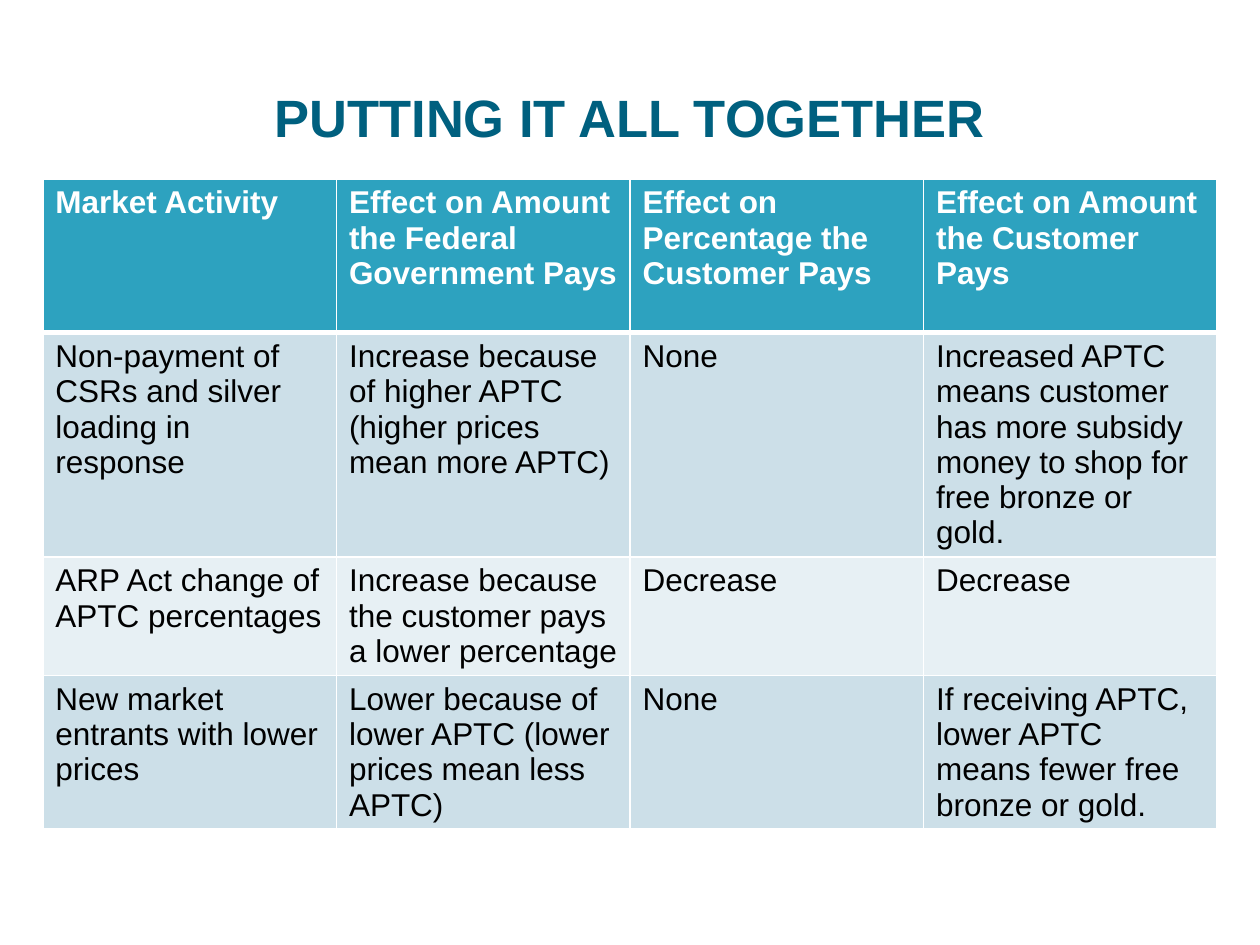
from dataclasses import dataclass

from lxml.etree import SubElement
from pptx import Presentation
from pptx.dml.color import RGBColor as Color
from pptx.enum.text import MSO_ANCHOR as Anchor, PP_ALIGN as Align
from pptx.oxml.ns import qn
from pptx.util import Inches, Pt


@dataclass(frozen=True)
class Theme:
    font: str = "Arial"
    title_size: int = 30
    table_size: int = 18
    title: str = "00607F"
    header_fill: str = "2DA2BF"
    header_text: str = "FFFFFF"
    body_text: str = "000000"
    bands: tuple[str, str] = ("CCDFE8", "E7F0F4")
    border: str = "FFFFFF"
    thin: int = 1
    thick: int = 3


@dataclass(frozen=True)
class Row:
    height: float
    texts: tuple[str, str, str, str]


THEME = Theme()
COLUMN_WIDTH = 2.33
ROWS = (
    Row(1.22, (
        "Market Activity",
        "Effect on Amount the Federal Government Pays",
        "Effect on Percentage the Customer Pays",
        "Effect on Amount the Customer Pays",
    )),
    Row(1.78, (
        "Non-payment of CSRs and silver loading in response",
        "Increase because of higher APTC (higher prices mean more APTC)",
        "None",
        "Increased APTC means customer has more subsidy money to shop for "
        "free bronze or gold.",
    )),
    Row(0.94, (
        "ARP Act change of APTC percentages",
        "Increase because the customer pays a lower percentage",
        "Decrease",
        "Decrease",
    )),
    Row(1.22, (
        "New market entrants with lower prices",
        "Lower because of lower APTC (lower prices mean less APTC)",
        "None",
        "If receiving APTC, lower APTC means fewer free bronze or gold.",
    )),
)


def format_text(text_frame, size: int, color: str, bold: bool) -> None:
    for paragraph in text_frame.paragraphs:
        for run in paragraph.runs:
            run.font.name = THEME.font
            run.font.size = Pt(size)
            run.font.bold = bold
            run.font.color.rgb = Color.from_string(color)


def set_borders(cell, top: int, bottom: int) -> None:
    """Draw the four cell borders; widths are in points."""
    properties = cell._tc.get_or_add_tcPr()
    widths = {"L": THEME.thin, "R": THEME.thin, "T": top, "B": bottom}
    for side, width in widths.items():
        line = SubElement(properties, qn(f"a:ln{side}"), w=str(Pt(width)))
        fill = SubElement(line, qn("a:solidFill"))
        SubElement(fill, qn("a:srgbClr"), val=THEME.border)


def add_title(slide, text: str) -> None:
    title = slide.shapes.title
    title.left, title.top = Inches(0.5), Inches(0.3)
    title.width, title.height = Inches(9), Inches(1.25)
    title.text_frame.text = text
    title.text_frame.vertical_anchor = Anchor.MIDDLE
    title.text_frame.paragraphs[0].alignment = Align.CENTER
    format_text(title.text_frame, THEME.title_size, THEME.title, bold=True)


def fill_cell(cell, text: str, row_index: int) -> None:
    is_header = row_index == 0
    # The rule under the header is shared by the first two rows
    set_borders(
        cell,
        top=THEME.thick if row_index == 1 else THEME.thin,
        bottom=THEME.thick if is_header else THEME.thin,
    )
    fill = THEME.header_fill if is_header else THEME.bands[(row_index - 1) % 2]
    cell.fill.solid()
    cell.fill.fore_color.rgb = Color.from_string(fill)
    cell.text_frame.text = text
    color = THEME.header_text if is_header else THEME.body_text
    format_text(cell.text_frame, THEME.table_size, color, bold=is_header)


def add_effects_table(slide, rows: tuple[Row, ...]) -> None:
    column_count = len(rows[0].texts)
    table = slide.shapes.add_table(
        len(rows), column_count, Inches(0.34), Inches(1.42),
        Inches(COLUMN_WIDTH * column_count),
        Inches(sum(row.height for row in rows)),
    ).table
    for column in table.columns:
        column.width = Inches(COLUMN_WIDTH)
    for row_index, row in enumerate(rows):
        table.rows[row_index].height = Inches(row.height)
        for column_index, text in enumerate(row.texts):
            fill_cell(table.cell(row_index, column_index), text, row_index)


def main() -> None:
    presentation = Presentation()
    presentation.slide_width = Inches(10)
    presentation.slide_height = Inches(7.5)
    # Title Only layout
    slide = presentation.slides.add_slide(presentation.slide_layouts[5])
    add_title(slide, "PUTTING IT ALL TOGETHER")
    add_effects_table(slide, ROWS)
    presentation.save("out.pptx")


if __name__ == "__main__":
    main()
